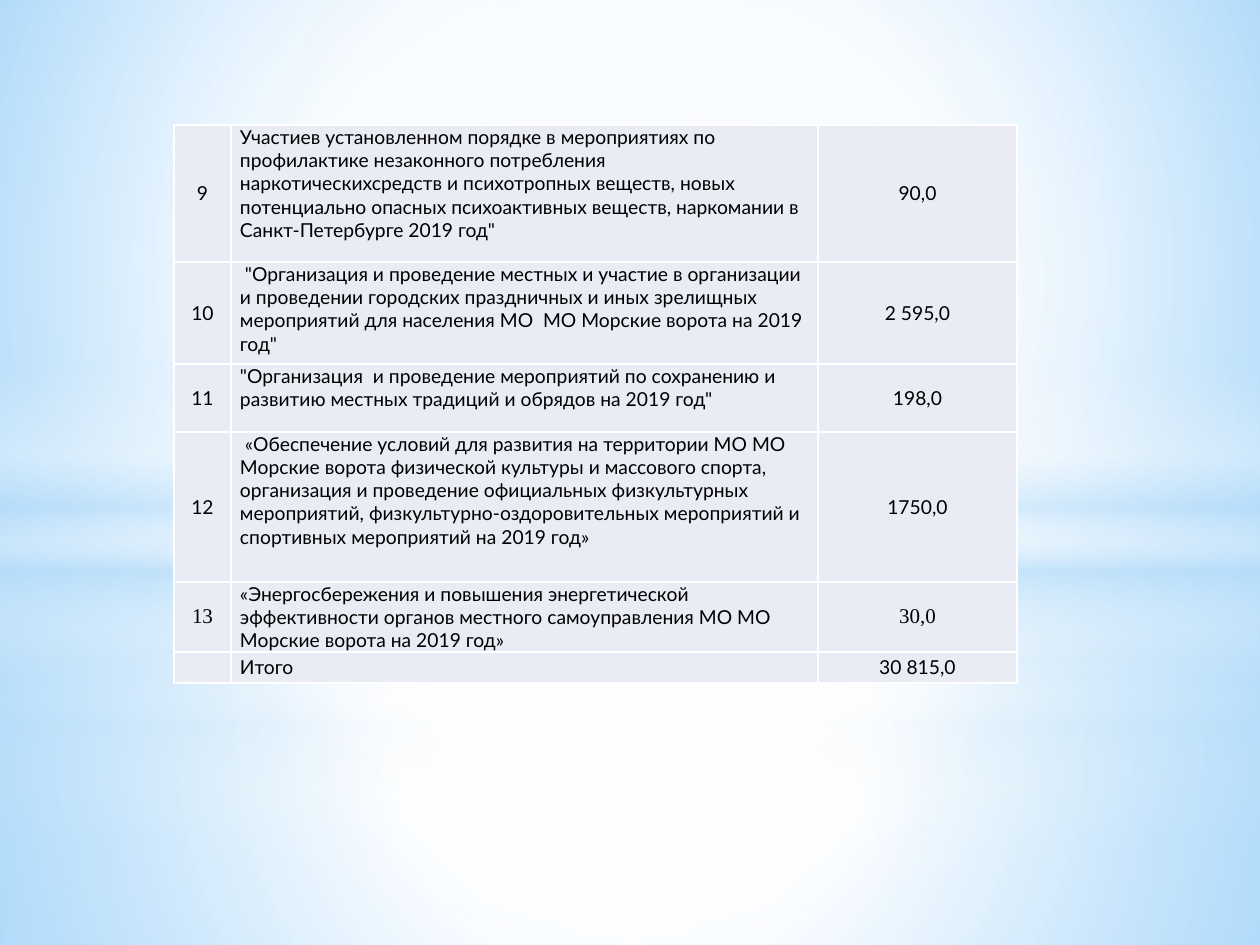
from lxml import etree
from pptx import Presentation
from pptx.dml.color import RGBColor
from pptx.enum.shapes import MSO_SHAPE
from pptx.enum.text import MSO_ANCHOR, PP_ALIGN
from pptx.oxml import parse_xml
from pptx.util import Emu, Pt

RECTANGLE, OVAL = MSO_SHAPE.RECTANGLE, MSO_SHAPE.OVAL
TOP, MIDDLE = MSO_ANCHOR.TOP, MSO_ANCHOR.MIDDLE
LEFT, CENTER = PP_ALIGN.LEFT, PP_ALIGN.CENTER
NAMESPACE = "http://schemas.openxmlformats.org/drawingml/2006/main"
SCALE = 914400 / 126
WIDTH, HEIGHT = 1260, 945

COLORS = {
    "white": "FFFFFF", "haze": "B4DCFA", "sky": "9ED5FF", "deep": "5BB9FF",
    "cell": "E9EBF5", "text": "000000",
}
SANS, SERIF = ("Lato", 11), ("Times New Roman", 12)

ROWS = [
    (137, "9", "Участиев установленном порядке в мероприятиях по профилактике незаконного "
     "потребления наркотическихсредств и психотропных веществ, новых потенциально опасных "
     "психоактивных веществ, наркомании в Санкт-Петербурге 2019 год\"", "90,0", TOP, SANS),
    (102, "10", " \"Организация и проведение местных и участие в организации и проведении "
     "городских праздничных и иных зрелищных мероприятий для населения МО  МО Морские ворота "
     "на 2019 год\"", "2 595,0", TOP, SANS),
    (68, "11", "\"Организация  и проведение мероприятий по сохранению и развитию местных "
     "традиций и обрядов на 2019 год\"", "198,0", TOP, SANS),
    (150, "12", " «Обеспечение условий для развития на территории МО МО Морские ворота "
     "физической культуры и массового спорта, организация и проведение официальных "
     "физкультурных мероприятий, физкультурно-оздоровительных мероприятий и спортивных "
     "мероприятий на 2019 год»", "1750,0", TOP, SANS),
    (70, "13", "«Энергосбережения и повышения энергетической эффективности органов местного "
     "самоуправления МО МО Морские ворота на 2019 год»", "30,0", MIDDLE, SERIF),
    (31, "", "Итого", "30 815,0", MIDDLE, SANS),
]
COLUMNS = [57, 587, 199]
TABLE_LEFT, TABLE_TOP = 174, 125

BACKGROUND = [(0, "sky", 100), (60, "white", 100), (100, "deep", 100)]
STREAK = [(0, "white", 0), (29, "white", 30), (45, "haze", 40),
          (55, "white", 26), (65, "haze", 60), (100, "white", 0)]
CENTERED = (50, 50, 50, 50)
GLOWS = [
    {"horizon": 703, "streak": 519, "extra": 0, "halo": 56},
    {"horizon": 533, "streak": 365, "extra": 1, "halo": 54},
]


def px(value):
    return Emu(round(value * SCALE))


def gradient(stops, focus=None):
    parts = "".join(
        f'<a:gs pos="{position * 1000}"><a:srgbClr val="{COLORS[color]}">'
        f'<a:alpha val="{alpha * 1000}"/></a:srgbClr></a:gs>'
        for position, color, alpha in stops)
    if focus:
        left, top, right, bottom = (side * 1000 for side in focus)
        direction = (f'<a:path path="circle"><a:fillToRect l="{left}" t="{top}" '
                     f'r="{right}" b="{bottom}"/></a:path>')
    else:
        direction = '<a:lin ang="5400000" scaled="0"/>'
    return parse_xml(f'<a:gradFill xmlns:a="{NAMESPACE}" rotWithShape="1">'
                     f'<a:gsLst>{parts}</a:gsLst>{direction}</a:gradFill>')


def replace_fill(properties, fill):
    solid = properties.find(f"{{{NAMESPACE}}}solidFill")
    properties.replace(solid, fill)


def add_layer(slide, kind, top, height, stops, focus=None):
    shape = slide.shapes.add_shape(kind, 0, px(top), px(WIDTH), px(height))
    shape.shadow.inherit = False
    shape.line.fill.background()
    shape.fill.solid()
    replace_fill(shape._element.spPr, gradient(stops, focus))


def add_glow(slide, horizon, streak, extra, halo):
    lower = [(0, "white", 91 + extra), (37, "white", 76 + extra), (100, "haze", 79 + extra)]
    upper = [(0, "white", 89 + extra), (48, "white", 62 + extra), (100, "haze", 79 + extra)]
    add_layer(slide, RECTANGLE, horizon, HEIGHT - horizon, lower, CENTERED)
    add_layer(slide, RECTANGLE, 0, horizon, upper, CENTERED)
    add_layer(slide, RECTANGLE, streak, 315, STREAK)
    add_layer(slide, OVAL, 220, 703, [(0, "white", 100), (halo, "white", 0)], CENTERED)


def add_borders(cell):
    properties = cell._tc.get_or_add_tcPr()
    for index, side in enumerate(("lnL", "lnR", "lnT", "lnB")):
        line = etree.Element(f"{{{NAMESPACE}}}{side}", w=str(Pt(1)))
        fill = etree.SubElement(line, f"{{{NAMESPACE}}}solidFill")
        etree.SubElement(fill, f"{{{NAMESPACE}}}srgbClr", val=COLORS["white"])
        properties.insert(index, line)


def fill_cell(cell, text, alignment, anchor, font):
    cell.fill.solid()
    cell.fill.fore_color.rgb = RGBColor.from_string(COLORS["cell"])
    cell.margin_left = cell.margin_right = px(9)
    cell.margin_top = cell.margin_bottom = 0
    cell.vertical_anchor = anchor
    add_borders(cell)
    paragraph = cell.text_frame.paragraphs[0]
    paragraph.alignment = alignment
    name, size = font
    if not text:
        paragraph._p.get_or_add_endParaRPr().set("sz", str(size * 100))
        return
    paragraph.text = text
    paragraph.font.name = name
    paragraph.font.size = Pt(size)
    paragraph.font.color.rgb = RGBColor.from_string(COLORS["text"])


def add_budget_table(slide):
    total_height = sum(row[0] for row in ROWS)
    table = slide.shapes.add_table(
        len(ROWS), len(COLUMNS), px(TABLE_LEFT), px(TABLE_TOP),
        px(sum(COLUMNS)), px(total_height)).table
    table.first_row = table.horz_banding = False
    for column, width in zip(table.columns, COLUMNS):
        column.width = px(width)
    for row, (height, number, title, amount, anchor, font) in zip(table.rows, ROWS):
        row.height = px(height)
        fill_cell(row.cells[0], number, CENTER, MIDDLE, font)
        fill_cell(row.cells[1], title, LEFT, anchor, SANS)
        fill_cell(row.cells[2], amount, CENTER, MIDDLE, font)


def main():
    presentation = Presentation()
    presentation.slide_width, presentation.slide_height = px(WIDTH), px(HEIGHT)
    slide = presentation.slides.add_slide(presentation.slide_layouts[6])
    slide.background.fill.solid()
    replace_fill(slide._element.cSld.bg.bgPr, gradient(BACKGROUND, (20, 10, 20, 60)))
    for glow in GLOWS:
        add_glow(slide, **glow)
    add_budget_table(slide)
    presentation.save("out.pptx")


if __name__ == "__main__":
    main()
